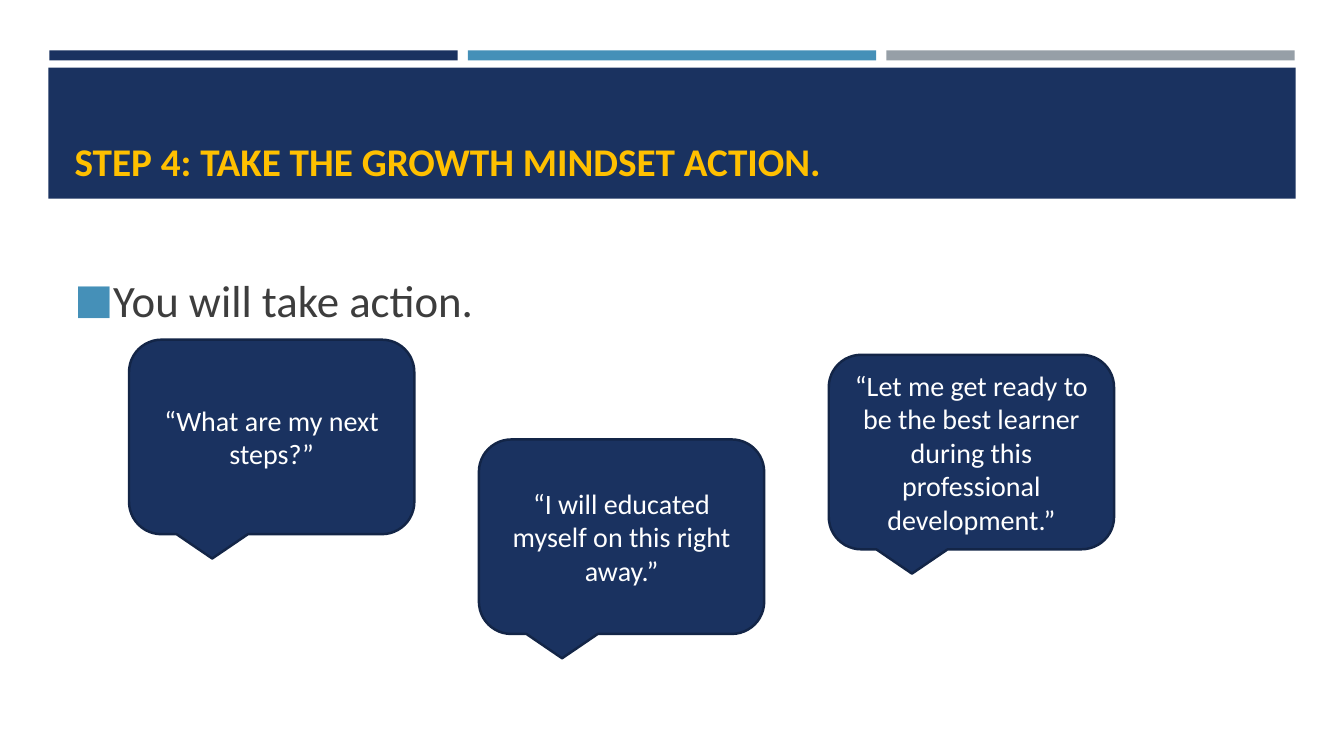
from lxml.etree import SubElement
from pptx import Presentation
from pptx.dml.color import RGBColor
from pptx.enum.shapes import MSO_SHAPE
from pptx.enum.text import MSO_ANCHOR, MSO_AUTO_SIZE, PP_ALIGN
from pptx.oxml.ns import qn
from pptx.util import Inches, Pt

NAVY = RGBColor(0x1A, 0x32, 0x60)
DARK_NAVY = RGBColor(0x13, 0x25, 0x47)
BLUE = RGBColor(0x45, 0x90, 0xB8)
GRAY = RGBColor(0x96, 0x9F, 0xA7)
GOLD = RGBColor(0xFF, 0xC0, 0x00)
TEXT = RGBColor(0x3D, 0x3D, 0x3D)
WHITE = RGBColor(0xFF, 0xFF, 0xFF)


class SlideBuilder:
    font = "Calibri"

    def __init__(self, prs):
        self.s = prs.slides.add_slide(prs.slide_layouts[5])

    def add_text(self, tf, text, size, color, align=PP_ALIGN.LEFT, bold=False):
        tf.word_wrap = True
        p = tf.paragraphs[0]
        p.alignment = align
        r = p.add_run()
        r.text = text
        r.font.name = self.font
        r.font.size = Pt(size)
        r.font.bold = bold
        r.font.color.rgb = color
        return p

    def shape(self, kind, box, fill):
        sp = self.s.shapes.add_shape(kind, *map(Inches, box))
        sp.shadow.inherit = False
        sp.fill.solid()
        sp.fill.fore_color.rgb = fill
        sp.line.fill.background()
        return sp

    def title(self, text, box):
        sp = self.s.shapes.title
        sp.left, sp.top, sp.width, sp.height = map(Inches, box)
        tf = sp.text_frame
        tf.auto_size = MSO_AUTO_SIZE.NONE
        tf.vertical_anchor = MSO_ANCHOR.BOTTOM
        self.add_text(tf, text, 28, GOLD, bold=True)
        # The title must sit in front of its band
        sp.element.getparent().append(sp.element)

    def bullet(self, text, box):
        tf = self.s.shapes.add_textbox(*map(Inches, box)).text_frame
        tf.vertical_anchor = MSO_ANCHOR.MIDDLE
        pPr = self.add_text(tf, text, 32, TEXT)._p.get_or_add_pPr()
        pPr.set("marL", str(Inches(0.33)))
        pPr.set("indent", str(-Inches(0.33)))
        color = SubElement(pPr, qn("a:buClr"))
        SubElement(color, qn("a:srgbClr"), val=str(BLUE))
        SubElement(pPr, qn("a:buSzPct"), val="92000")
        SubElement(pPr, qn("a:buFont"), typeface=self.font)
        SubElement(pPr, qn("a:buChar"), char="■")

    def callout(self, text, left, top):
        sp = self.shape(MSO_SHAPE.ROUNDED_RECTANGULAR_CALLOUT, (left, top, 2.83, 1.93), NAVY)
        sp.line.color.rgb = DARK_NAVY
        sp.line.width = Pt(1.75)
        sp.text_frame.vertical_anchor = MSO_ANCHOR.MIDDLE
        self.add_text(sp.text_frame, text, 20, WHITE, PP_ALIGN.CENTER)


def main():
    prs = Presentation()
    prs.slide_width, prs.slide_height = Inches(13.33), Inches(7.5)
    slide = SlideBuilder(prs)

    for i, color in enumerate((NAVY, BLUE, GRAY)):
        slide.shape(MSO_SHAPE.RECTANGLE, (0.49 + 4.15 * i, 0.5, 4.05, 0.1), color)
    slide.shape(MSO_SHAPE.RECTANGLE, (0.48, 0.67, 12.37, 1.3), NAVY)
    slide.title("STEP 4: TAKE THE GROWTH MINDSET ACTION.", (0.64, 0.77, 12.06, 1.11))
    slide.bullet("You will take action.", (0.64, 2.6, 12.06, 0.74))

    callouts = (
        ("“What are my next steps?”", 3.37),
        ("“I will educated myself on this right away.”", 4.36),
        ("“Let me get ready to be the best learner during this professional development.”", 3.52),
    )
    for i, (text, top) in enumerate(callouts):
        slide.callout(text, 1.28 + 3.47 * i, top)

    prs.save("out.pptx")


if __name__ == "__main__":
    main()
